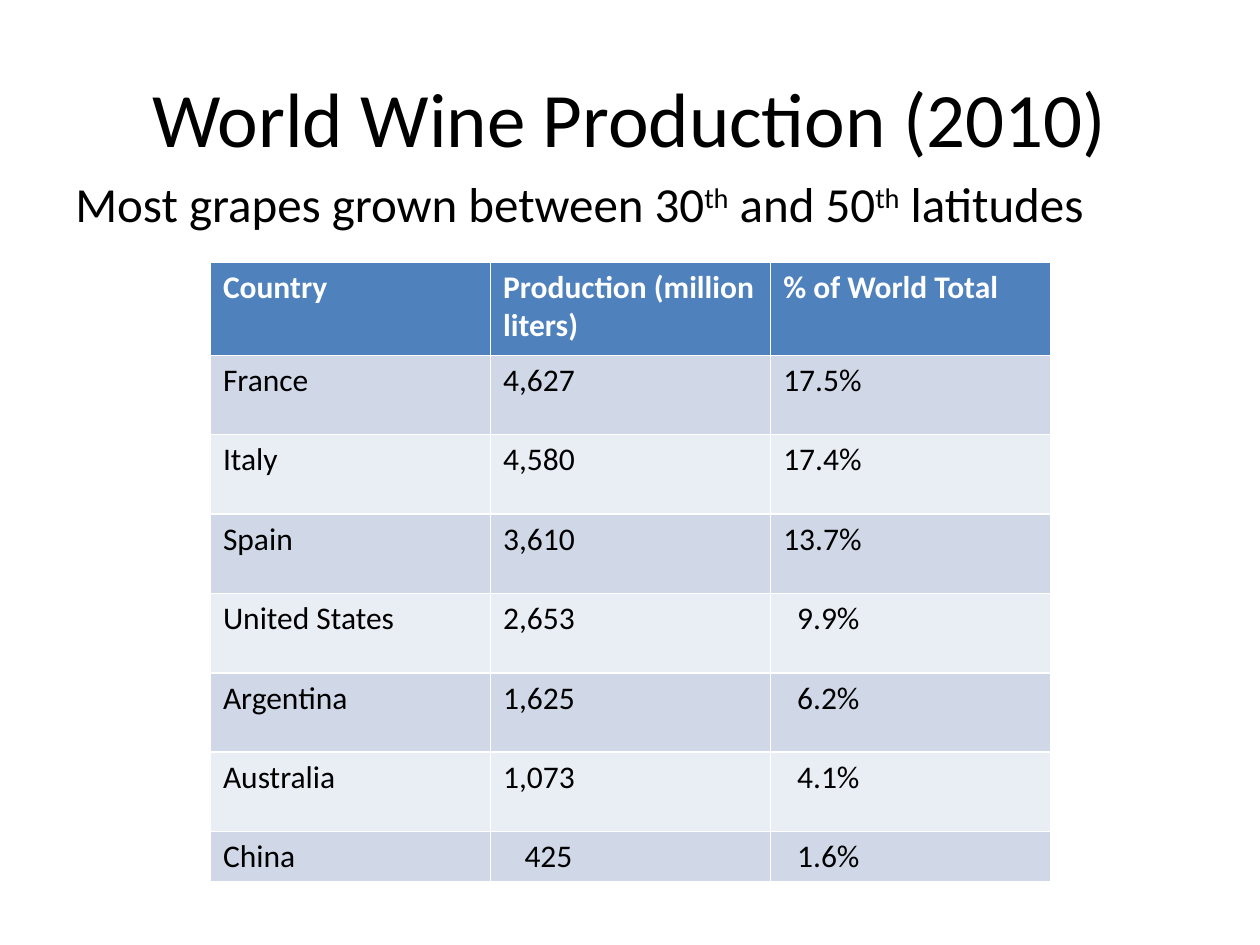
from pptx import Presentation
from pptx.dml.color import RGBColor
from pptx.enum.text import MSO_ANCHOR, PP_ALIGN
from pptx.util import Inches, Pt

COLORS = {
    "text": "000000",
    "header_text": "FFFFFF",
    "header": "4F81BD",
    "odd_row": "D0D8E8",
    "even_row": "E9EDF4",
}
HEADINGS = ("Country", "Production (million liters)", "% of World Total")
PRODUCERS = [
    ("France", "4,627", "17.5%"),
    ("Italy", "4,580", "17.4%"),
    ("Spain", "3,610", "13.7%"),
    ("United States", "2,653", "9.9%"),
    ("Argentina", "1,625", "6.2%"),
    ("Australia", "1,073", "4.1%"),
    ("China", "425", "1.6%"),
]
ROW_HEIGHTS = [0.74] + [0.63] * 6 + [0.4]
INDENTS = {"425": 0.17, "9.9%": 0.11, "6.2%": 0.11, "4.1%": 0.11, "1.6%": 0.11}


def add_text(paragraph, text, size=18, color="text", bold=False, raised=False):
    """Append a formatted run to a paragraph."""
    run = paragraph.add_run()
    run.text = text
    run.font.name = "Calibri"
    run.font.size = Pt(size)
    run.font.bold = bold
    run.font.color.rgb = RGBColor.from_string(COLORS[color])
    if raised:
        run._r.get_or_add_rPr().set("baseline", "30000")


def add_frame(slide, left, top, width, height, anchor=MSO_ANCHOR.TOP):
    """Add a wrapping text box and return its first paragraph."""
    frame = slide.shapes.add_textbox(
        Inches(left), Inches(top), Inches(width), Inches(height)
    ).text_frame
    frame.word_wrap = True
    frame.vertical_anchor = anchor
    return frame.paragraphs[0]


def add_title(slide):
    """Add the centred slide title."""
    title = add_frame(slide, 0.5, 0.3, 9, 1.25, MSO_ANCHOR.MIDDLE)
    title.alignment = PP_ALIGN.CENTER
    add_text(title, "World Wine Production (2010)", size=44)


def add_latitude_note(slide):
    """Add the sentence on latitudes with raised ordinals."""
    note = add_frame(slide, 0.5, 1.33, 9, 5.37)
    note.space_before = Pt(5.6)
    pieces = ("Most grapes grown between 30", "th", " and 50", "th", " latitudes")
    for piece in pieces:
        add_text(note, piece, size=28, raised=piece == "th")


def add_production_table(slide):
    """Add the table of producers with banded rows."""
    table = slide.shapes.add_table(
        len(ROW_HEIGHTS), len(HEADINGS),
        Inches(1.67), Inches(2.08), Inches(6.67), Inches(sum(ROW_HEIGHTS)),
    ).table
    for row, height in zip(table.rows, ROW_HEIGHTS):
        row.height = Inches(height)
    for index, values in enumerate([HEADINGS] + PRODUCERS):
        heading = index == 0
        band = "header" if heading else "odd_row" if index % 2 else "even_row"
        for cell, value in zip(table.rows[index].cells, values):
            cell.fill.solid()
            cell.fill.fore_color.rgb = RGBColor.from_string(COLORS[band])
            cell.margin_left = Inches(0.1 + INDENTS.get(value, 0))
            add_text(cell.text_frame.paragraphs[0], value, bold=heading,
                     color="header_text" if heading else "text")


def main():
    """Build and save the wine production slide."""
    deck = Presentation()
    deck.slide_width, deck.slide_height = Inches(10), Inches(7.5)
    slide = deck.slides.add_slide(deck.slide_layouts[6])
    add_title(slide)
    add_latitude_note(slide)
    add_production_table(slide)
    deck.save("out.pptx")


if __name__ == "__main__":
    main()
